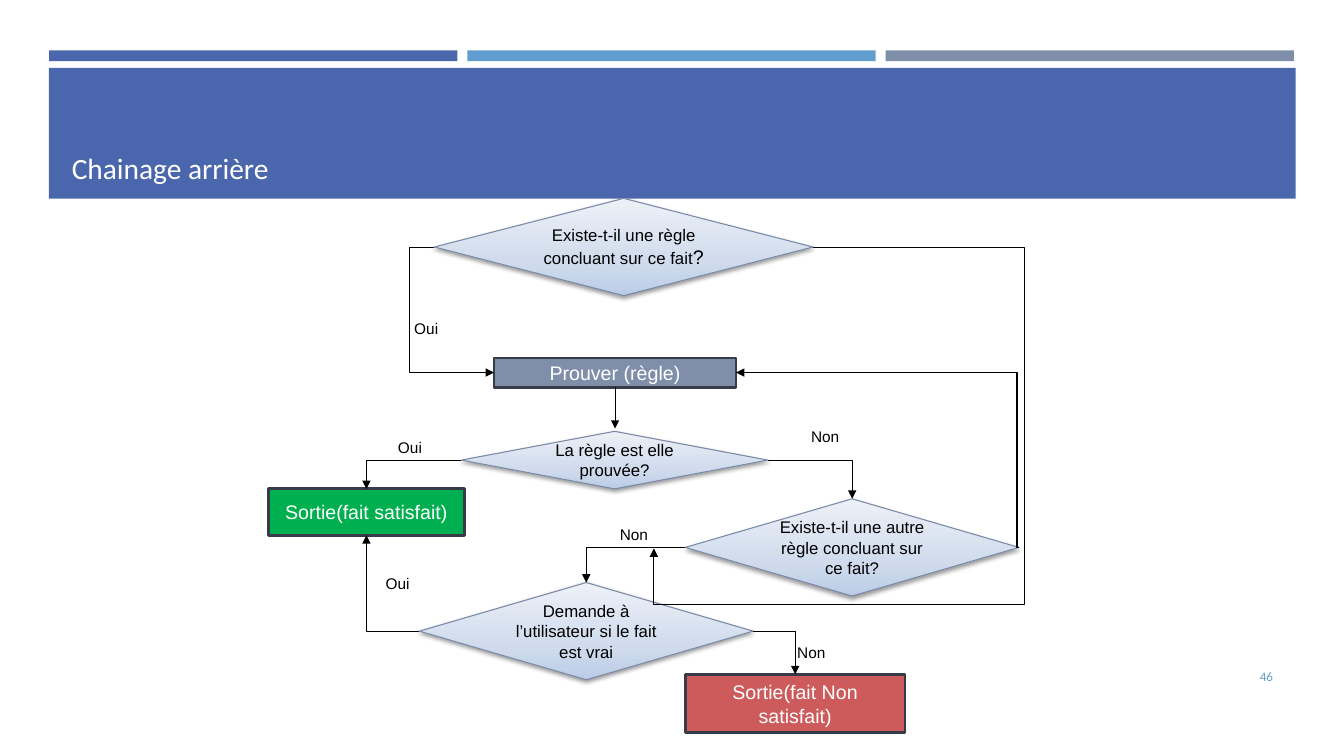
from copy import deepcopy

from lxml.etree import SubElement
from pptx import Presentation
from pptx.dml.color import RGBColor
from pptx.enum.shapes import MSO_CONNECTOR as Connector, MSO_SHAPE as Shape
from pptx.enum.text import MSO_ANCHOR as Anchor, PP_ALIGN as Align
from pptx.oxml.ns import qn
from pptx.util import Cm, Pt

THEME = {
    "bars": ("4A66AC", "629DD1", "7F8FA9"),
    "banner": "4A66AC",
    "number": "629DD1",
    "light": "FFFFFF",
    "dark": "000000",
    "box_line": "353C47",
    "question_line": "7A8AA6",
    "question_stops": ((0, "BCCCE7"), (0.35, "D0DCED"), (1, "EDF0F7")),
    "heading_font": "Calibri",
    "body_font": "Arial",
    "title_size": 21,
    "box_size": 14,
    "question_size": 12,
    "label_size": 11,
    "number_size": 9.3,
}

# Lengths are centimetres: left, top, width, height
TITLE = ("Chainage arrière", (1.63, 1.96, 30.63, 2.82))
NUMBER = ("46", (29.34, 16.54, 2.92, 1.02))
BANNER = (1.23, 1.71, 31.42, 3.3)
BAR, BAR_PITCH = (1.24, 1.27, 10.29, 0.27), 10.54

QUESTIONS = {
    "règle": ("Existe-t-il une règle concluant sur ce fait", (10.95, 5, 9.54, 2.45)),
    "prouvée": ("La règle est elle prouvée?", (11.63, 10.87, 7.72, 1.45)),
    "autre": ("Existe-t-il une autre règle concluant sur ce fait?", (17.27, 12.57, 8.41, 2.45)),
    "demande": ("Demande à l’utilisateur si le fait est vrai", (10.57, 14.68, 8.41, 2.45)),
}
LARGE_MARK = {"règle": "?"}
BOXES = {
    "prouver": ("Prouver (règle)", (12.45, 9.02, 6.1, 0.74), "7F8FA9"),
    "satisfait": ("Sortie(fait satisfait)", (6.76, 12.32, 4.95, 1.17), "00B050"),
    "non satisfait": ("Sortie(fait Non satisfait)", (17.27, 16.99, 5.54, 1.48), "CD5B5B"),
}
LABEL_SIZE = (1.32, 0.74)
LABELS = [
    ("Oui", (10.19, 7.92)), ("Oui", (9.78, 10.92)), ("Non", (20.19, 10.64)),
    ("Non", (15.37, 13.11)), ("Non", (19.84, 16.08)), ("Oui", (9.47, 14.35)),
]
TOP, LEFT, BOTTOM, RIGHT = range(4)
PROOF_ARROW_END = 10.8
CORNERS = [  # one bend: across, then up or down
    ("prouvée", LEFT, "satisfait", TOP),
    ("prouvée", RIGHT, "autre", TOP),
    ("autre", LEFT, "demande", TOP),
    ("demande", LEFT, "satisfait", BOTTOM),
    ("demande", RIGHT, "non satisfait", TOP),
]
DETOURS = [  # two bends, at the given x
    ("règle", LEFT, "prouver", LEFT, 10.31),
    ("autre", RIGHT, "prouver", RIGHT, 25.63),
]
NO_RULE_END, NO_RULE_X, NO_RULE_Y = (16.48, 13.82), 25.81, 15.24

prs = Presentation()
prs.slide_width, prs.slide_height = Cm(33.87), Cm(19.05)
slide = prs.slides.add_slide(prs.slide_layouts[6])


def cm(lengths):
    return [Cm(length) for length in lengths]


def rgb(name):
    return RGBColor.from_string(name)


def write(shape, text, size, color, font=THEME["body_font"], align=Align.CENTER,
          anchor=Anchor.MIDDLE, inset=(0.25, 0.13), mark=""):
    frame = shape.text_frame
    across, down = cm(inset)
    settings = {"word_wrap": True, "vertical_anchor": anchor,
                "margin_left": across, "margin_right": across,
                "margin_top": down, "margin_bottom": down}
    for name, value in settings.items():
        setattr(frame, name, value)
    paragraph = frame.paragraphs[0]
    paragraph.alignment = align
    for part, part_size in ((text, size), (mark, THEME["box_size"])):
        if part:
            run = paragraph.add_run()
            run.text = part
            for name, value in {"size": Pt(part_size), "name": font}.items():
                setattr(run.font, name, value)
            run.font.color.rgb = rgb(color)


def add_block(kind, place, fill=None, line=None, width=0):
    block = slide.shapes.add_shape(kind, *cm(place))
    block.shadow.inherit = False
    if fill:
        block.fill.solid()
        block.fill.fore_color.rgb = rgb(fill)
    if line:
        block.line.color.rgb = rgb(line)
        block.line.width = Pt(width)
    else:
        block.line.fill.background()
    return block


def add_text(text, place, *args, **kwargs):
    write(slide.shapes.add_textbox(*cm(place)), text, *args, **kwargs)


def shade(question):
    """Give a diamond its three-stop gradient and soft drop shadow."""
    fill = question.fill
    fill.gradient()
    fill.gradient_angle = 90
    stops = question._element.spPr.find(".//" + qn("a:gsLst"))
    stops.append(deepcopy(stops[-1]))
    for stop, (position, color) in zip(fill.gradient_stops, THEME["question_stops"]):
        stop.position = position
        stop.color.rgb = rgb(color)
    effects = question._element.spPr.find(qn("a:effectLst"))
    shadow = SubElement(effects, qn("a:outerShdw"), blurRad=str(Pt(3.1)),
                        dist=str(Pt(1.6)), dir="5400000", rotWithShape="0")
    black = SubElement(shadow, qn("a:srgbClr"), val=THEME["dark"])
    SubElement(black, qn("a:alpha"), val="38000")


def side(node, site):
    """Return the middle of one side of a node."""
    left, top, width, height = places[node]
    return {TOP: (left + width / 2, top), LEFT: (left, top + height / 2),
            BOTTOM: (left + width / 2, top + height),
            RIGHT: (left + width, top + height / 2)}[site]


def add_arrow(start, end, bend_x=None, bend_y=None, kind=Connector.ELBOW):
    arrow = slide.shapes.add_connector(kind, *cm(start + end))
    arrow.line.color.rgb = rgb(THEME["dark"])
    arrow.line.width = Pt(0.75)
    SubElement(arrow.line._get_or_add_ln(), qn("a:tailEnd"), type="triangle")
    properties = arrow._element.spPr
    SubElement(properties, qn("a:effectLst"))
    if kind == Connector.ELBOW:
        bends = [(bend - a) / (b - a) for bend, a, b in zip((bend_x, bend_y), start, end)
                 if bend is not None]
        geometry = properties.find(qn("a:prstGeom"))
        geometry.set("prst", f"bentConnector{len(bends) + 2}")
        guides = geometry.find(qn("a:avLst"))
        for index, ratio in enumerate(bends, 1):
            SubElement(guides, qn("a:gd"), name=f"adj{index}", fmla=f"val {round(ratio * 100000)}")
    return arrow


left, *rest = BAR
for column, color in enumerate(THEME["bars"]):
    add_block(Shape.RECTANGLE, (left + column * BAR_PITCH, *rest), color)
add_block(Shape.RECTANGLE, BANNER, THEME["banner"])
heading = {"font": THEME["heading_font"], "inset": (0.18, 0.1)}
add_text(*TITLE, THEME["title_size"], THEME["light"], align=Align.LEFT, anchor=Anchor.BOTTOM, **heading)
add_text(*NUMBER, THEME["number_size"], THEME["number"], align=Align.RIGHT, **heading)

places, nodes = {}, {}
for key, (text, place) in QUESTIONS.items():
    places[key] = place
    nodes[key] = add_block(Shape.DIAMOND, place, line=THEME["question_line"], width=0.75)
    shade(nodes[key])
    write(nodes[key], text, THEME["question_size"], THEME["dark"], mark=LARGE_MARK.get(key, ""))
for key, (text, place, color) in BOXES.items():
    places[key] = place
    nodes[key] = add_block(Shape.RECTANGLE, place, color, THEME["box_line"], 2)
    write(nodes[key], text, THEME["box_size"], THEME["light"])

proof_start = side("prouver", BOTTOM)
proof_arrow = add_arrow(proof_start, (proof_start[0], PROOF_ARROW_END), kind=Connector.STRAIGHT)
proof_arrow.begin_connect(nodes["prouver"], BOTTOM)
for source, exit_side, target, entry_side, *bend in CORNERS + DETOURS:
    add_arrow(side(source, exit_side), side(target, entry_side), *bend)
add_arrow(side("règle", RIGHT), NO_RULE_END, NO_RULE_X, NO_RULE_Y)

for text, corner in LABELS:
    add_text(text, corner + LABEL_SIZE, THEME["label_size"], THEME["dark"],
             align=Align.LEFT, anchor=Anchor.TOP)

prs.save("out.pptx")
